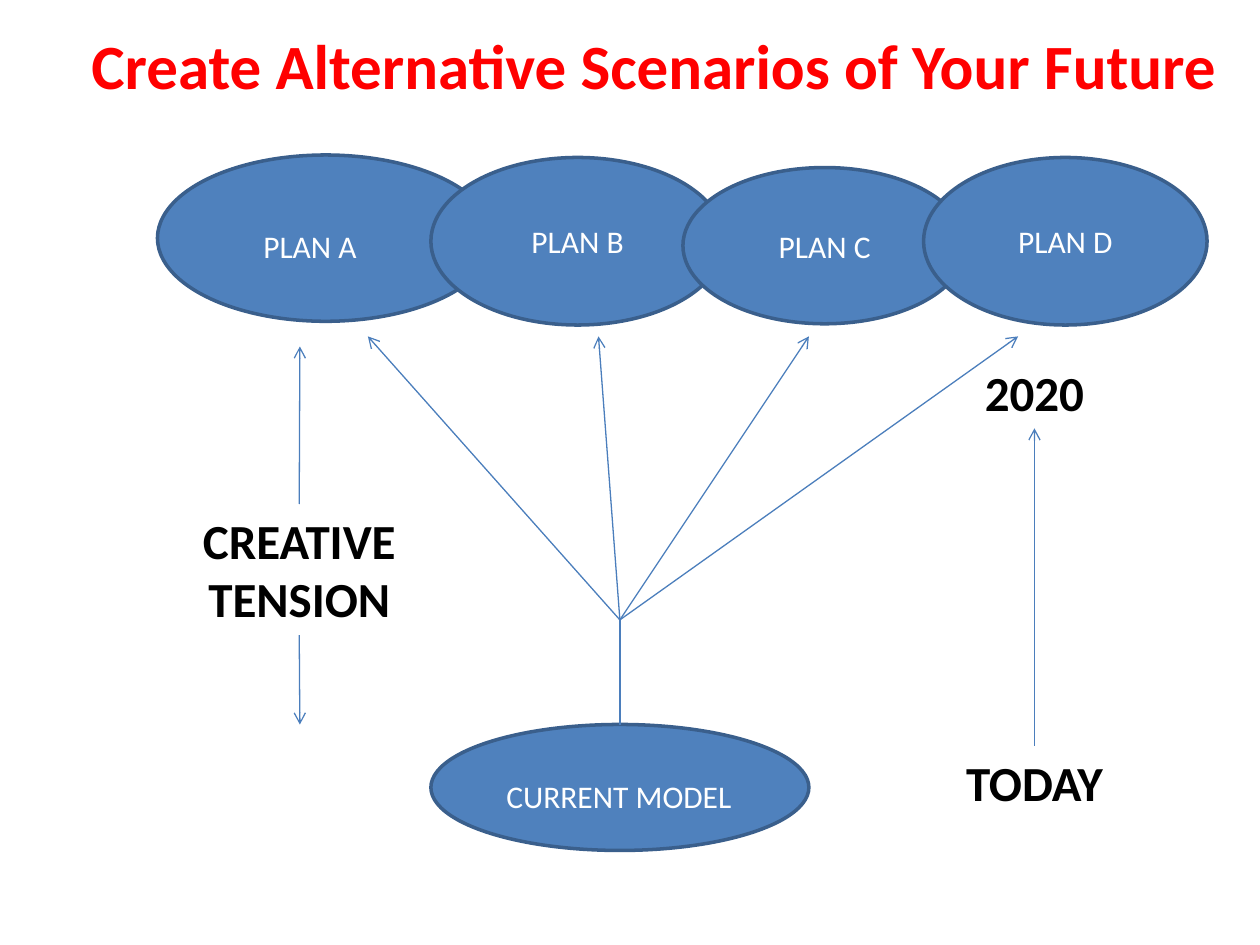
from lxml import etree
from pptx import Presentation
from pptx import util as u
from pptx.dml import color
from pptx.enum import shapes, text
from pptx.oxml import ns

TOP, BOTTOM = 0, 2


def rgb(value):
    return color.RGBColor.from_string(value)


class SlideBuilder:
    font = "Calibri"
    fill = "4F81BD"
    outline = "3A5F8C"
    arrow = "4B7EBC"
    white = "FFFFFF"
    black = "000000"
    red = "FF0000"

    def __init__(self, presentation):
        self.slide = presentation.slides.add_slide(presentation.slide_layouts[6])

    def add_wording(self, shape, wording, size, hex_color, bold=False, align=text.PP_ALIGN.CENTER):
        shape.text_frame.word_wrap = True
        paragraph = shape.text_frame.paragraphs[0]
        paragraph.alignment = align
        run = paragraph.add_run()
        run.text = wording
        run.font.name = self.font
        run.font.size = u.Pt(size)
        run.font.bold = bold
        run.font.color.rgb = rgb(hex_color)

    def ellipse(self, left, top, width, height, wording=None):
        shape = self.slide.shapes.add_shape(
            shapes.MSO_SHAPE.OVAL, *map(u.Inches, (left, top, width, height)))
        shape.shadow.inherit = False
        shape.fill.solid()
        shape.fill.fore_color.rgb = rgb(self.fill)
        shape.line.color.rgb = rgb(self.outline)
        shape.line.width = u.Pt(2)
        shape.text_frame.vertical_anchor = text.MSO_ANCHOR.MIDDLE
        if wording:
            self.add_wording(shape, wording, 18, self.white)
        return shape

    def label(self, left, top, width, height, wording, size, hex_color, **style):
        shape = self.slide.shapes.add_textbox(*map(u.Inches, (left, top, width, height)))
        shape.text_frame.auto_size = text.MSO_AUTO_SIZE.SHAPE_TO_FIT_TEXT
        self.add_wording(shape, wording, size, hex_color, **style)
        return shape

    def line(self, start, end, begin=None, finish=None, head=True):
        connector = self.slide.shapes.add_connector(
            shapes.MSO_CONNECTOR.STRAIGHT, *map(u.Inches, (*start, *end)))
        connector.line.color.rgb = rgb(self.arrow)
        connector.line.width = u.Pt(0.75)
        if begin:
            connector.begin_connect(*begin)
        if finish:
            connector.end_connect(*finish)
        properties = connector._element.spPr
        if head:
            outline = properties.find(ns.qn("a:ln"))
            etree.SubElement(outline, ns.qn("a:tailEnd"), type="arrow")
        etree.SubElement(properties, ns.qn("a:effectLst"))


def main():
    presentation = Presentation()
    presentation.slide_width = u.Inches(10)
    presentation.slide_height = u.Inches(7.5)
    builder = SlideBuilder(presentation)

    model = builder.ellipse(3.42, 5.75, 3, 1)
    for left, top, width, height, wording in (
        (1.25, 1.23, 2.67, 1.32, None),
        (3.42, 1.25, 2.33, 1.33, "PLAN B"),
        (5.42, 1.33, 2.25, 1.24, "PLAN C"),
        (7.33, 1.25, 2.25, 1.33, "PLAN D"),
    ):
        builder.ellipse(left, top, width, height, wording)
    builder.label(1.5, 1.75, 1.92, 0.4, "PLAN A", 18, builder.white)

    fork = (4.92, 4.92)
    builder.line((4.92, 5.75), fork, begin=(model, TOP), head=False)
    for plan_x in (2.92, 4.75, 6.42, 8.08):
        builder.line(fork, (plan_x, 2.67))

    tension = builder.label(0.75, 4, 3.25, 1.04, "CREATIVE TENSION", 28, builder.black, bold=True)
    builder.line((2.38, 5.04), (2.38, 5.75), begin=(tension, BOTTOM))
    builder.line((2.38, 4), (2.38, 2.75), begin=(tension, TOP))

    today = builder.label(7.17, 5.92, 2.08, 0.57, "TODAY", 28, builder.black, bold=True)
    future = builder.label(7.5, 2.83, 1.42, 0.57, "2020", 28, builder.black, bold=True)
    builder.label(3.92, 6.12, 2.25, 0.4, "CURRENT MODEL", 18, builder.white,
                  align=text.PP_ALIGN.LEFT)
    builder.line((8.21, 5.92), (8.21, 3.38), begin=(today, TOP), finish=(future, BOTTOM))

    builder.label(0.38, 0.16, 9.62, 0.71, "Create Alternative Scenarios of Your Future",
                  36, builder.red, bold=True)

    presentation.save("out.pptx")


if __name__ == "__main__":
    main()
